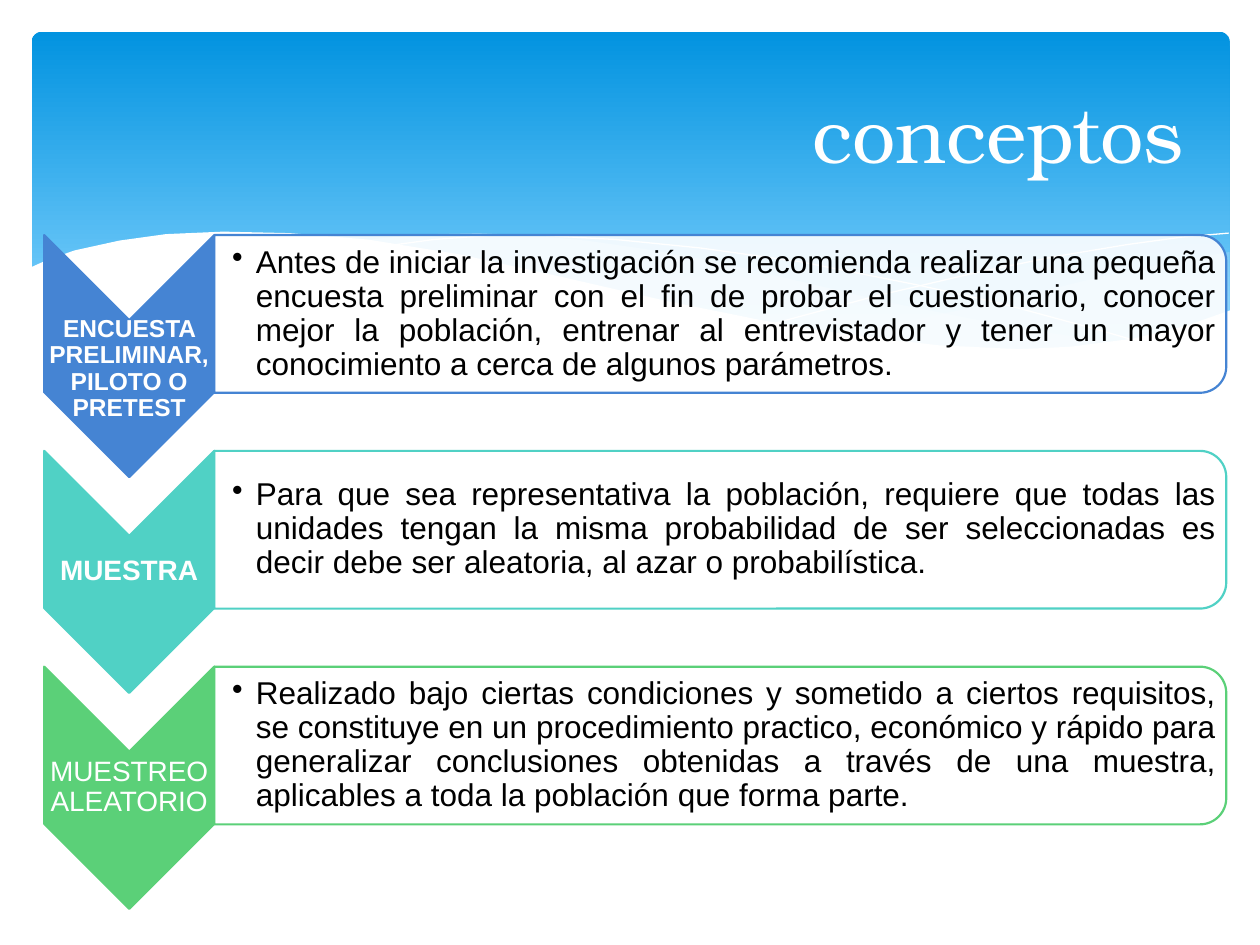
"""Build the "conceptos" slide: a wave banner above three chevron-labelled definitions."""
import lxml.etree
import pptx
import pptx.dml.color
import pptx.enum.shapes
import pptx.enum.text
import pptx.oxml.ns
import pptx.util

Cm, Pt = pptx.util.Cm, pptx.util.Pt
SHAPES = pptx.enum.shapes.MSO_SHAPE
ALIGN = pptx.enum.text.PP_ALIGN
MIDDLE = pptx.enum.text.MSO_ANCHOR.MIDDLE

TITLE = "conceptos"
CONCEPTS = [
    dict(label="ENCUESTA PRELIMINAR, PILOTO O PRETEST", size=14, bold=True, drop=0.26, color="4584D3",
         text="Antes de iniciar la investigación se recomienda realizar una pequeña encuesta preliminar "
              "con el fin de probar el cuestionario, conocer mejor la población, entrenar al "
              "entrevistador y tener un mayor conocimiento a cerca de algunos parámetros."),
    dict(label="MUESTRA", size=16, bold=True, drop=0, color="50D1C5",
         text="Para que sea representativa la población, requiere que todas las unidades tengan la misma "
              "probabilidad de ser seleccionadas es decir debe ser aleatoria, al azar o probabilística."),
    dict(label="MUESTREO ALEATORIO", size=16, bold=False, drop=0, color="5BD078",
         text="Realizado bajo ciertas condiciones y sometido a ciertos requisitos, se constituye en un "
              "procedimiento practico, económico y rápido para generalizar conclusiones obtenidas a "
              "través de una muestra, aplicables a toda la población que forma parte."),
]
THEME = dict(title_font="TeX Gyre Bonum", body_font="Arial", title_size=44, body_size=18, outline=1.25,
             light="FFFFFF", dark="000000", sky_top="0293E0", sky_bottom="83D3FE", wave="C6E7FC")

WAVE_UNIT = Cm(0.01)
RIGHT_WAVE = [
    (2479, 508), (2375, 526), (2263, 549), (2187, 566), (2045, 602), (1852, 643), (1679, 673), (1791, 688),
    (1923, 701), (2040, 706), (2144, 704), (2238, 693), (2319, 678), (2393, 658), (2479, 627)]
MIDDLE_WAVE = [
    (2268, 693), (2126, 673), (1969, 645), (1793, 610), (1598, 564), (1445, 528), (1306, 503), (1181, 485),
    (1067, 475), (965, 470), (874, 472), (795, 478), (726, 485), (869, 505), (1026, 536), (1140, 564),
    (1346, 610), (1527, 648), (1689, 676), (1834, 696), (1963, 704), (2078, 706), (2177, 704)]
FALLING_LINE = [
    (785, 495), (874, 483), (983, 475), (1100, 475), (1242, 483), (1412, 500), (1615, 528), (1847, 574),
    (2019, 612), (2207, 663), (2304, 691)]
RISING_LINE = [(1557, 653), (1765, 597), (1971, 549), (2123, 518), (2273, 493), (2383, 478), (2477, 470)]
WHITE_WAVE = [
    (2482, 625), (2388, 658), (2283, 683), (2159, 699), (2055, 704), (1890, 696), (1697, 673), (1532, 645),
    (1344, 607), (1135, 559), (927, 513), (742, 483), (584, 470), (450, 467), (335, 472), (241, 485),
    (150, 505), (91, 526), (58, 541), (58, 836), (2482, 836)]
WAVES = [(RIGHT_WAVE, "wave", 29), (MIDDLE_WAVE, "wave", 40), (FALLING_LINE, None, None),
         (RISING_LINE, None, None), (WHITE_WAVE, "light", 100)]

FIRST_TOP, PITCH = 4.74, 4.35
CHEVRON_LEFT, CHEVRON_WIDTH, CHEVRON_HEIGHT = 0.89, 3.43, 4.88
PANEL_LEFT, PANEL_WIDTH, PANEL_HEIGHT = 4.32, 20.4, 3.18
TEXT_WIDTH, TEXT_HEIGHT = 20.22, 2.87
LABEL_HEIGHT = 1.47
INSET, BULLET_INSET, BULLET_INDENT = 0.03, 0.36, 0.48


def rgb(value):
    return pptx.dml.color.RGBColor.from_string(value)


def paint(shape, fill, line=None, opacity=100):
    shape.shadow.inherit = False
    if fill:
        shape.fill.solid()
        shape.fill.fore_color.rgb = rgb(fill)
        if opacity < 100:
            color = shape.fill._xPr.find(".//" + pptx.oxml.ns.qn("a:srgbClr"))
            lxml.etree.SubElement(color, pptx.oxml.ns.qn("a:alpha"), val=str(opacity * 1000))
    else:
        shape.fill.background()
    if line:
        shape.line.color.rgb = rgb(line)
    else:
        shape.line.fill.background()


def add_banner(slide):
    banner = slide.shapes.add_shape(SHAPES.ROUNDED_RECTANGLE, Cm(0.64), Cm(0.64), Cm(24.15), Cm(6.86))
    banner.adjustments[0] = 0.03
    paint(banner, None)
    banner.fill.gradient()
    banner.fill.gradient_angle = 270
    stops = zip(banner.fill.gradient_stops, (0, 0.9), ("sky_top", "sky_bottom"))
    for stop, position, name in stops:
        stop.position = position
        stop.color.rgb = rgb(THEME[name])


def add_wave(slide, points, fill, opacity):
    builder = slide.shapes.build_freeform(*points[0], scale=WAVE_UNIT)
    builder.add_line_segments(points[1:], close=fill is not None)
    wave = builder.convert_to_shape()
    if fill:
        paint(wave, THEME[fill], opacity=opacity)
    else:
        paint(wave, None, THEME["light"])
        wave.line.width = Pt(0)


def add_turned_shape(slide, kind, left, top, width, height, fill, line, opacity=100):
    shift = (width - height) / 2
    shape = slide.shapes.add_shape(kind, Cm(left + shift), Cm(top - shift), Cm(height), Cm(width))
    shape.rotation = 90
    paint(shape, fill, line, opacity)
    shape.line.width = Pt(THEME["outline"])


def add_text(slide, text, left, top, width, height, size, color, align, bold=False, left_inset=INSET):
    box = slide.shapes.add_textbox(Cm(left), Cm(top), Cm(width), Cm(height))
    frame = box.text_frame
    frame.word_wrap = True
    frame.vertical_anchor = MIDDLE
    frame.margin_left = Cm(left_inset)
    frame.margin_top = frame.margin_right = frame.margin_bottom = Cm(INSET)
    paragraph = frame.paragraphs[0]
    paragraph.text = text
    paragraph.alignment = align
    paragraph.line_spacing = 0.9
    paragraph.font.name = THEME["body_font"]
    paragraph.font.size = Pt(size)
    paragraph.font.bold = bold
    paragraph.font.color.rgb = rgb(color)
    return paragraph


def add_bullet(paragraph):
    properties = paragraph._p.get_or_add_pPr()
    properties.set("marL", str(Cm(BULLET_INDENT)))
    properties.set("indent", str(-Cm(BULLET_INDENT)))
    bullet = lxml.etree.Element(pptx.oxml.ns.qn("a:buChar"), char="•")
    properties.find(pptx.oxml.ns.qn("a:defRPr")).addprevious(bullet)


def add_concept(slide, concept, top):
    color = concept["color"]
    add_turned_shape(slide, SHAPES.CHEVRON, CHEVRON_LEFT, top, CHEVRON_WIDTH, CHEVRON_HEIGHT, color, color)
    label_top = top + (CHEVRON_HEIGHT - LABEL_HEIGHT) / 2 + concept["drop"]
    add_text(slide, concept["label"], CHEVRON_LEFT, label_top, CHEVRON_WIDTH, LABEL_HEIGHT,
             concept["size"], THEME["light"], ALIGN.CENTER, concept["bold"])
    add_turned_shape(slide, SHAPES.ROUND_2_SAME_RECTANGLE, PANEL_LEFT, top, PANEL_WIDTH, PANEL_HEIGHT,
                     THEME["light"], color, 90)
    text_top = top + (PANEL_HEIGHT - TEXT_HEIGHT) / 2
    add_bullet(add_text(slide, concept["text"], PANEL_LEFT, text_top, TEXT_WIDTH, TEXT_HEIGHT,
                        THEME["body_size"], THEME["dark"], ALIGN.JUSTIFY, left_inset=BULLET_INSET))


def set_title(slide):
    title = slide.shapes.title
    title.left, title.top, title.width, title.height = Cm(1.27), Cm(0.94), Cm(22.86), Cm(3.48)
    title.text_frame.text = TITLE
    title.text_frame.vertical_anchor = MIDDLE
    paragraph = title.text_frame.paragraphs[0]
    paragraph.alignment = ALIGN.RIGHT
    paragraph.font.name = THEME["title_font"]
    paragraph.font.size = Pt(THEME["title_size"])
    paragraph.font.color.rgb = rgb(THEME["light"])
    slide.shapes._spTree.append(title._element)


def main():
    presentation = pptx.Presentation()
    presentation.slide_width, presentation.slide_height = Cm(25.4), Cm(19.05)
    slide = presentation.slides.add_slide(presentation.slide_layouts[5])
    add_banner(slide)
    for points, fill, opacity in WAVES:
        add_wave(slide, points, fill, opacity)
    for row, concept in enumerate(CONCEPTS):
        add_concept(slide, concept, FIRST_TOP + row * PITCH)
    set_title(slide)
    presentation.save("out.pptx")


if __name__ == "__main__":
    main()
